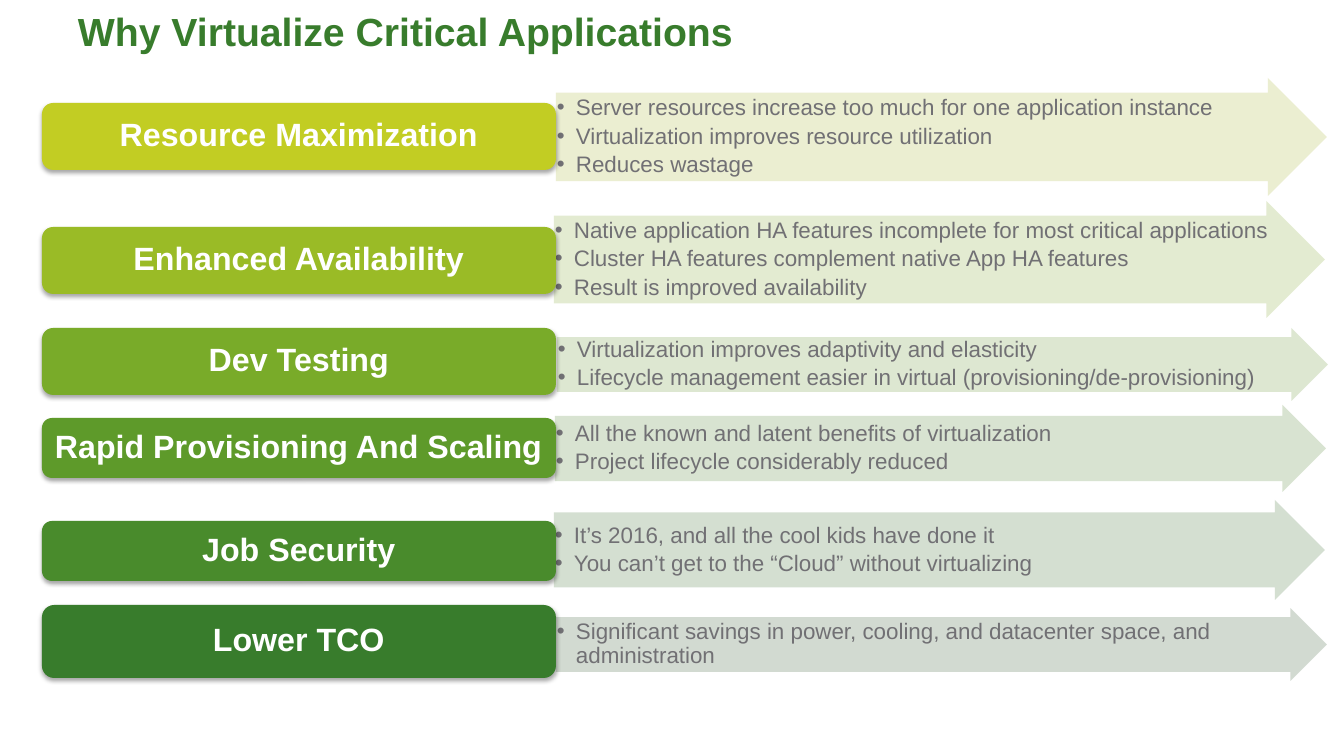
"""Build a slide pairing six virtualization benefits with arrows of details."""
from lxml.etree import SubElement
from pptx import Presentation
from pptx.dml.color import RGBColor
from pptx.enum.shapes import MSO_SHAPE as Shape
from pptx.enum.text import MSO_ANCHOR as Anchor, PP_ALIGN as Align
from pptx.oxml.ns import qn
from pptx.util import Pt

PX = 914400 / 100.8
FONT = "Arial"
TITLE = "Why Virtualize Critical Applications"
DARK_GREEN, GREY, WHITE = "387C2C", "717074", "FFFFFF"
LABEL_LEFT, LABEL_WIDTH, ARROW_WIDTH = 42, 514, 771

# label, label colour, label (top, height), arrow colour, arrow (left, top, height), details
BENEFITS = [
    ("Resource Maximization", "C2CD23", (103, 67), "E9EDCD", (556, 78, 118), [
        "Server resources increase too much for one application instance",
        "Virtualization improves resource utilization",
        "Reduces wastage"]),
    ("Enhanced Availability", "9ABB26", (227, 67), "E1E9CC", (554, 201, 117), [
        "Native application HA features incomplete for most critical applications",
        "Cluster HA features complement native App HA features",
        "Result is improved availability"]),
    ("Dev Testing", "79AB29", (328, 67), "DAE5CC", (557, 328, 73), [
        "Virtualization improves adaptivity and elasticity",
        "Lifecycle management easier in virtual (provisioning/de-provisioning)"]),
    ("Rapid Provisioning And Scaling", "5E9A2A", (418, 60), "D4E1CC", (555, 405, 87), [
        "All the known and latent benefits of virtualization",
        "Project lifecycle considerably reduced"]),
    ("Job Security", "498B2C", (521, 60), "D0DCCD", (554, 500, 100), [
        "It’s 2016, and all the cool kids have done it",
        "You can’t get to the “Cloud” without virtualizing"]),
    ("Lower TCO", DARK_GREEN, (605, 73), "CED7CD", (556, 608, 73), [
        "Significant savings in power, cooling, and datacenter space, and administration"]),
]


def px(length):
    return round(length * PX)


def colour(value):
    return RGBColor.from_string(value)


def set_margins(frame, side, edge):
    frame.margin_left = frame.margin_right = px(side)
    frame.margin_top = frame.margin_bottom = px(edge)


def write(para, text, size, ink, bold=False, align=Align.LEFT):
    para.alignment = align
    para.line_spacing = 0.9
    span = para.add_run()
    span.text = text
    font = span.font
    font.name, font.size, font.bold = FONT, Pt(size), bold
    font.color.rgb = colour(ink)


def add_bullet(para):
    props = para._p.get_or_add_pPr()
    props.set("marL", str(px(19)))
    props.set("indent", str(px(-19)))
    SubElement(props, qn("a:buFont"), typeface=FONT)
    SubElement(props, qn("a:buChar"), char="•")


def add_block(page, kind, bounds, fill, side, edge):
    block = page.shapes.add_shape(kind, *map(px, bounds))
    block.shadow.inherit = False
    block.fill.solid()
    block.fill.fore_color.rgb = colour(fill)
    block.line.fill.background()
    frame = block.text_frame
    frame.word_wrap = True
    frame.vertical_anchor = Anchor.MIDDLE
    set_margins(frame, side, edge)
    return block


def add_arrow(page, fill, place, details):
    left, top, height = place
    arrow = add_block(page, Shape.RIGHT_ARROW, (left, top, ARROW_WIDTH, height), fill, 1, 1)
    arrow.adjustments[0] = 0.75
    arrow.adjustments[1] = 0.5
    tint = arrow._element.spPr.find(qn("a:solidFill"))[0]
    SubElement(tint, qn("a:alpha"), val="90000")
    frame = arrow.text_frame
    for number, detail in enumerate(details):
        para = frame.add_paragraph() if number else frame.paragraphs[0]
        add_bullet(para)
        para.space_after = Pt(3)
        write(para, detail, 16, GREY)


def add_label(page, text, fill, place):
    top, height = place
    label = add_block(page, Shape.ROUNDED_RECTANGLE,
                      (LABEL_LEFT, top, LABEL_WIDTH, height), fill, 5, 5)
    effects = label._element.spPr.find(qn("a:effectLst"))
    shadow = SubElement(effects, qn("a:outerShdw"), blurRad=str(Pt(3.1)),
                        dist=str(Pt(1.8)), dir="5400000", rotWithShape="0")
    black = SubElement(shadow, qn("a:srgbClr"), val="000000")
    SubElement(black, qn("a:alpha"), val="35000")
    write(label.text_frame.paragraphs[0], text, 23, WHITE, True, Align.CENTER)


def add_title(page):
    title = page.shapes.title
    title.left, title.top, title.width, title.height = map(px, (68, 8, 1209, 64))
    frame = title.text_frame
    frame.vertical_anchor = Anchor.TOP
    set_margins(frame, 10, 5)
    write(frame.paragraphs[0], TITLE, 28, DARK_GREEN, True)


def main():
    deck = Presentation()
    deck.slide_width, deck.slide_height = px(1344), px(756)
    page = deck.slides.add_slide(deck.slide_layouts[5])
    add_title(page)
    for label, label_fill, label_place, arrow_fill, arrow_place, details in BENEFITS:
        add_arrow(page, arrow_fill, arrow_place, details)
        add_label(page, label, label_fill, label_place)
    deck.save("out.pptx")


if __name__ == "__main__":
    main()
